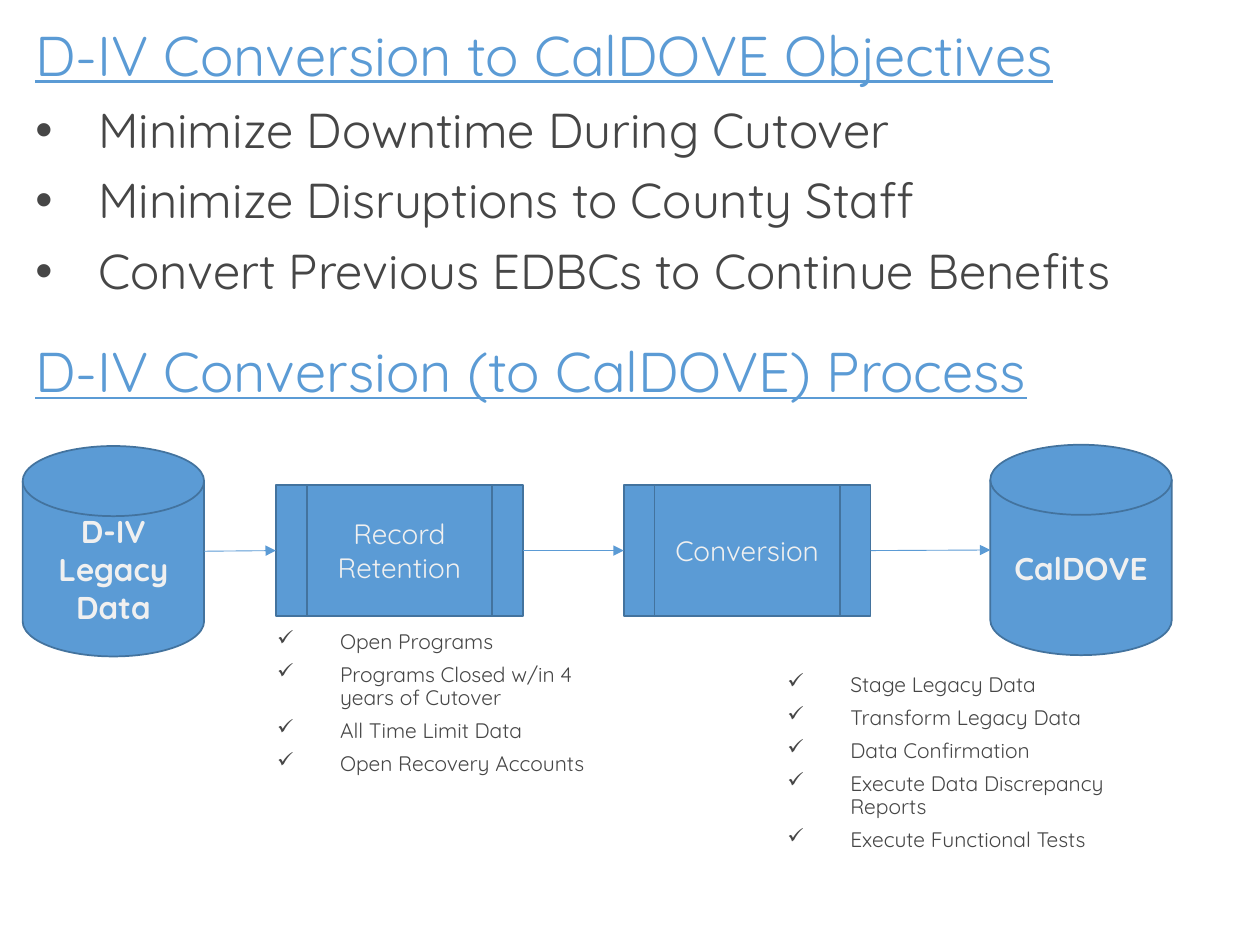
from lxml.etree import SubElement
from pptx import Presentation
from pptx.dml.color import RGBColor
from pptx.enum.shapes import MSO_CONNECTOR as CONN, MSO_SHAPE as SHAPE
from pptx.enum.text import MSO_ANCHOR as ANCHOR, MSO_AUTO_SIZE as FIT, PP_ALIGN as ALIGN
from pptx.oxml.ns import qn
from pptx.util import Inches, Pt

COLS, ROWS = 100, 75
WIDTH, HEIGHT = Inches(10), Inches(7.5)
FONT = "Quicksand"
BLUE, EDGE, DARK, LIGHT = "5B9BD5", "43739E", "464646", "F0F0F0"
OBJECTIVES = [
    "Minimize Downtime During Cutover",
    "Minimize Disruptions to County Staff",
    "Convert Previous EDBCs to Continue Benefits",
]
RETENTION = [
    "Open Programs",
    "Programs Closed w/in 4 years of Cutover",
    "All Time Limit Data",
    "Open Recovery Accounts",
]
CONVERSION = [
    "Stage Legacy Data",
    "Transform Legacy Data",
    "Data Confirmation",
    "Execute Data Discrepancy Reports",
    "Execute Functional Tests",
]
DISK, PROCESS = SHAPE.FLOWCHART_MAGNETIC_DISK, SHAPE.FLOWCHART_PREDEFINED_PROCESS
STEPS = [
    (DISK, (0, 0, 14.4, 16.7), ["D-IV", "Legacy", "Data"], 18, True),
    (PROCESS, (20.1, 3.1, 19.6, 10.4), ["Record", "Retention"], 16, False),
    (PROCESS, (47.7, 3.1, 19.6, 10.4), ["Conversion"], 16, False),
    (DISK, (76.8, -0.1, 14.4, 16.7), ["CalDOVE"], 18, True),
]


def rgb(value):
    """Turn a hex string into a colour."""
    return RGBColor.from_string(value)


def grid(x, y, w, h):
    """Turn grid columns and rows into slide lengths."""
    return (int(WIDTH * x / COLS), int(HEIGHT * y / ROWS),
            int(WIDTH * w / COLS), int(HEIGHT * h / ROWS))


def place(sp, box):
    """Move a placeholder to a grid box."""
    sp.left, sp.top, sp.width, sp.height = grid(*box)


def style(p, size, color, bold=False, underline=False):
    """Format every run of a paragraph."""
    for r in p.runs:
        r.font.name, r.font.size = FONT, Pt(size)
        r.font.bold, r.font.underline = bold, underline
        r.font.color.rgb = rgb(color)


def set_bullet(p, char=None):
    """Give a paragraph a hanging bullet, or none."""
    indent = Inches(0.5) if char else 0
    pPr = p._p.get_or_add_pPr()
    pPr.set("marL", str(indent))
    pPr.set("indent", str(-indent))
    if char:
        SubElement(pPr, qn("a:buChar")).set("char", char)
    else:
        SubElement(pPr, qn("a:buNone"))


def fill_text(tf, lines, before):
    """Write left-aligned lines into a wrapping frame."""
    tf.text = "\n".join(lines)
    tf.word_wrap, tf.auto_size = True, FIT.NONE
    tf.vertical_anchor = ANCHOR.TOP
    for p in tf.paragraphs:
        p.alignment, p.line_spacing, p.space_before = ALIGN.LEFT, 0.9, Pt(before)


def add_objectives(sp, box, heading, items):
    """Fill the body with a heading and its bulleted list."""
    place(sp, box)
    fill_text(sp.text_frame, [heading, *items], 10)
    first, *rest = sp.text_frame.paragraphs
    set_bullet(first)
    style(first, 32, BLUE, underline=True)
    for p in rest:
        set_bullet(p, "•")
        style(p, 28, DARK)


def add_heading(sp, box, text):
    """Fill the title with the process heading."""
    place(sp, box)
    fill_text(sp.text_frame, [text], 10)
    style(sp.text_frame.paragraphs[0], 32, BLUE, underline=True)


def add_step(slide, kind, box, lines, size, bold):
    """Draw one labelled step of the flow."""
    sp = slide.shapes.add_shape(kind, *grid(*box))
    sp.shadow.inherit = False
    sp.fill.solid()
    sp.fill.fore_color.rgb = rgb(BLUE)
    sp.line.color.rgb, sp.line.width = rgb(EDGE), Pt(1)
    tf = sp.text_frame
    tf.text, tf.vertical_anchor = "\n".join(lines), ANCHOR.MIDDLE
    for p in tf.paragraphs:
        p.alignment = ALIGN.CENTER
        style(p, size, LIGHT, bold)
    return sp


def add_arrow(slide, start, end):
    """Point from the right side of one step to the left side of the next."""
    line = slide.shapes.add_connector(
        CONN.STRAIGHT, start.left + start.width, start.top + start.height // 2,
        end.left, end.top + end.height // 2)
    line.line.color.rgb, line.line.width = rgb(BLUE), Pt(0.5)
    SubElement(line.line._get_or_add_ln(), qn("a:tailEnd")).set("type", "triangle")
    SubElement(line._element.spPr, qn("a:effectLst"))


def add_flow(slide, left, top, steps):
    """Draw the steps from a corner and join neighbours with arrows."""
    shapes = [add_step(slide, kind, (left + x, top + y, w, h), *label)
              for kind, (x, y, w, h), *label in steps]
    for start, end in zip(shapes, shapes[1:]):
        add_arrow(slide, start, end)


def add_checklist(slide, box, items):
    """Write a list with check marks."""
    tf = slide.shapes.add_textbox(*grid(*box)).text_frame
    fill_text(tf, items, 6)
    for p in tf.paragraphs:
        set_bullet(p, "✓")
        style(p, 12, DARK)


def main():
    """Build the slide and save it."""
    prs = Presentation()
    prs.slide_width, prs.slide_height = WIDTH, HEIGHT
    slide = prs.slides.add_slide(prs.slide_layouts[1])
    title, body = slide.placeholders
    add_objectives(body, (1.8, 1.7, 96.4, 24.1),
                   "D-IV Conversion to CalDOVE Objectives", OBJECTIVES)
    add_heading(title, (1.8, 26.8, 96.4, 7.5),
                "D-IV Conversion (to CalDOVE) Process")
    add_flow(slide, 1.8, 35.4, STEPS)
    add_checklist(slide, (21, 49.6, 29.1, 13.3), RETENTION)
    add_checklist(slide, (61.5, 53, 29.1, 16), CONVERSION)
    prs.save("out.pptx")


if __name__ == "__main__":
    main()
